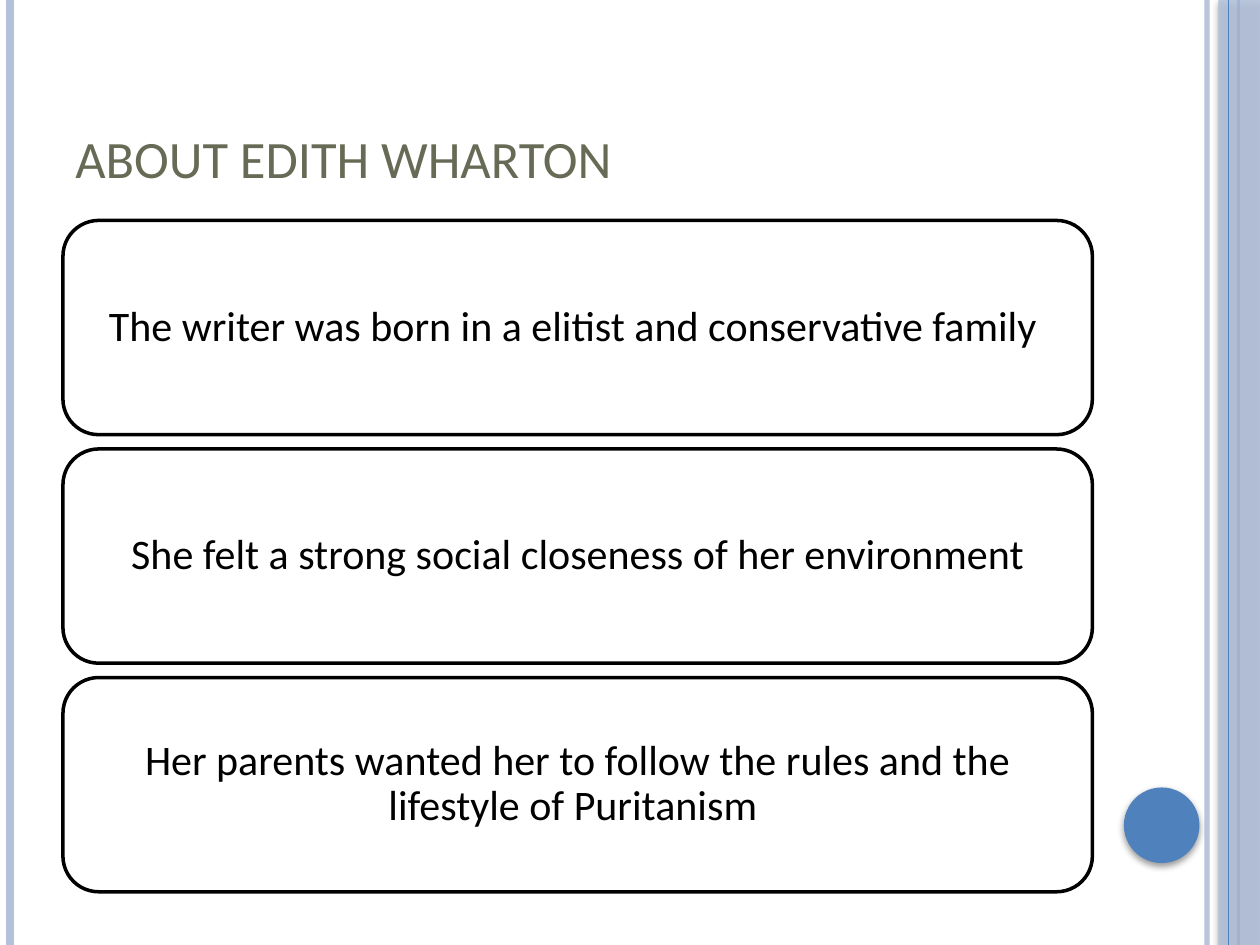
from dataclasses import dataclass

from lxml import etree
from pptx import Presentation
from pptx import util as u
from pptx.dml.color import RGBColor
from pptx.enum import shapes, text
from pptx.oxml import ns

WIDTH, HEIGHT = 720, 540
LEFT, BODY_WIDTH = 36, 588.24
CARD_TOP, CARD_HEIGHT, CARD_PITCH = 126, 122.4, 130.6
PALE, BLUE = "B3C1DB", "4F81BD"


@dataclass
class Rule:
    x: float
    color: str
    width: float
    alpha: int = 100


@dataclass
class Box:
    x: float
    y: float
    w: float
    h: float

    def emu(self) -> list:
        return [u.Pt(v) for v in (self.x, self.y, self.w, self.h)]


def rgb(color: str) -> RGBColor:
    return RGBColor.from_string(color)


def sub(parent, tag: str, **attrs):
    return etree.SubElement(parent, ns.qn(tag), {k: str(v) for k, v in attrs.items()})


def set_alpha(sp, percent: int) -> None:
    """Make the first colour of the shape's fill or line translucent."""
    color = next(sp._element.spPr.iter(ns.qn("a:srgbClr")))
    sub(color, "a:alpha", val=percent * 1000)


def add_soft_shadow(sp) -> None:
    sp.shadow.inherit = False
    effects = sp._element.spPr.find(ns.qn("a:effectLst"))
    shadow = sub(effects, "a:outerShdw", blurRad=u.Pt(4), dist=u.Pt(2),
                 dir=90 * 60000, rotWithShape=0)
    sub(sub(shadow, "a:srgbClr", val="000000"), "a:alpha", val=40000)


def add_rule(s, rule: Rule) -> None:
    x = u.Pt(rule.x)
    line = s.shapes.add_connector(shapes.MSO_CONNECTOR.STRAIGHT, x, 0, x, u.Pt(HEIGHT))
    line.line.color.rgb = rgb(rule.color)
    line.line.width = u.Pt(rule.width)
    if rule.alpha < 100:
        set_alpha(line, rule.alpha)
    sub(line._element.spPr, "a:effectLst")


def add_shape(s, kind, box: Box, fill: str):
    sp = s.shapes.add_shape(kind, *box.emu())
    sp.shadow.inherit = False
    sp.fill.solid()
    sp.fill.fore_color.rgb = rgb(fill)
    sp.line.fill.background()
    return sp


def write(sp, words: str, *, size: float, color: str, anchor, align,
          margin_y: float, spacing: float = 1, after: float = 0) -> None:
    tf = sp.text_frame
    tf.word_wrap = True
    tf.vertical_anchor = anchor
    tf.margin_left = tf.margin_right = u.Pt(7.2)
    tf.margin_top = tf.margin_bottom = u.Pt(margin_y)
    p = tf.paragraphs[0]
    p.alignment, p.line_spacing, p.space_after = align, spacing, u.Pt(after)
    r = p.add_run()
    r.text = words
    r.font.name, r.font.size = "Calibri", u.Pt(size)
    r.font.color.rgb = rgb(color)


def add_card(s, index: int, words: str) -> None:
    box = Box(LEFT, CARD_TOP + index * CARD_PITCH, BODY_WIDTH, CARD_HEIGHT)
    sp = add_shape(s, shapes.MSO_SHAPE.ROUNDED_RECTANGLE, box, "FFFFFF")
    sp.line.color.rgb = rgb("000000")
    sp.line.width = u.Pt(2)
    write(sp, words, size=24, color="000000", anchor=text.MSO_ANCHOR.MIDDLE,
          align=text.PP_ALIGN.CENTER, margin_y=7.2, spacing=0.9, after=8.4)


def main() -> None:
    prs = Presentation()
    prs.slide_width, prs.slide_height = u.Pt(WIDTH), u.Pt(HEIGHT)
    s = prs.slides.add_slide(prs.slide_layouts[6])

    # Vertical rules and side band
    for rule in (Rule(689.76, PALE, 3, 93), Rule(5.76, PALE, 4.5),
                 Rule(707.76, BLUE, 1.5)):
        add_rule(s, rule)
    band = add_shape(s, shapes.MSO_SHAPE.RECTANGLE, Box(696.24, 0, 23.76, HEIGHT), PALE)
    set_alpha(band, 87)
    add_soft_shadow(band)
    add_rule(s, Rule(702, BLUE, 0.75))

    # Dot
    dot = add_shape(s, shapes.MSO_SHAPE.OVAL, Box(642.24, 450, 43.2, 43.2), BLUE)
    add_soft_shadow(dot)

    # Title
    title = s.shapes.add_textbox(*Box(LEFT, 21.6, BODY_WIDTH, 90).emu())
    write(title, "ABOUT EDITH WHARTON", size=30, color="676A55",
          anchor=text.MSO_ANCHOR.BOTTOM, align=text.PP_ALIGN.LEFT, margin_y=3.6)

    # Cards
    cards = (
        "The writer was born in a elitist and conservative family ",
        "She felt a strong social closeness of her environment",
        "Her parents wanted her to follow the rules and the lifestyle of Puritanism ",
    )
    for index, words in enumerate(cards):
        add_card(s, index, words)

    prs.save("out.pptx")


if __name__ == "__main__":
    main()
